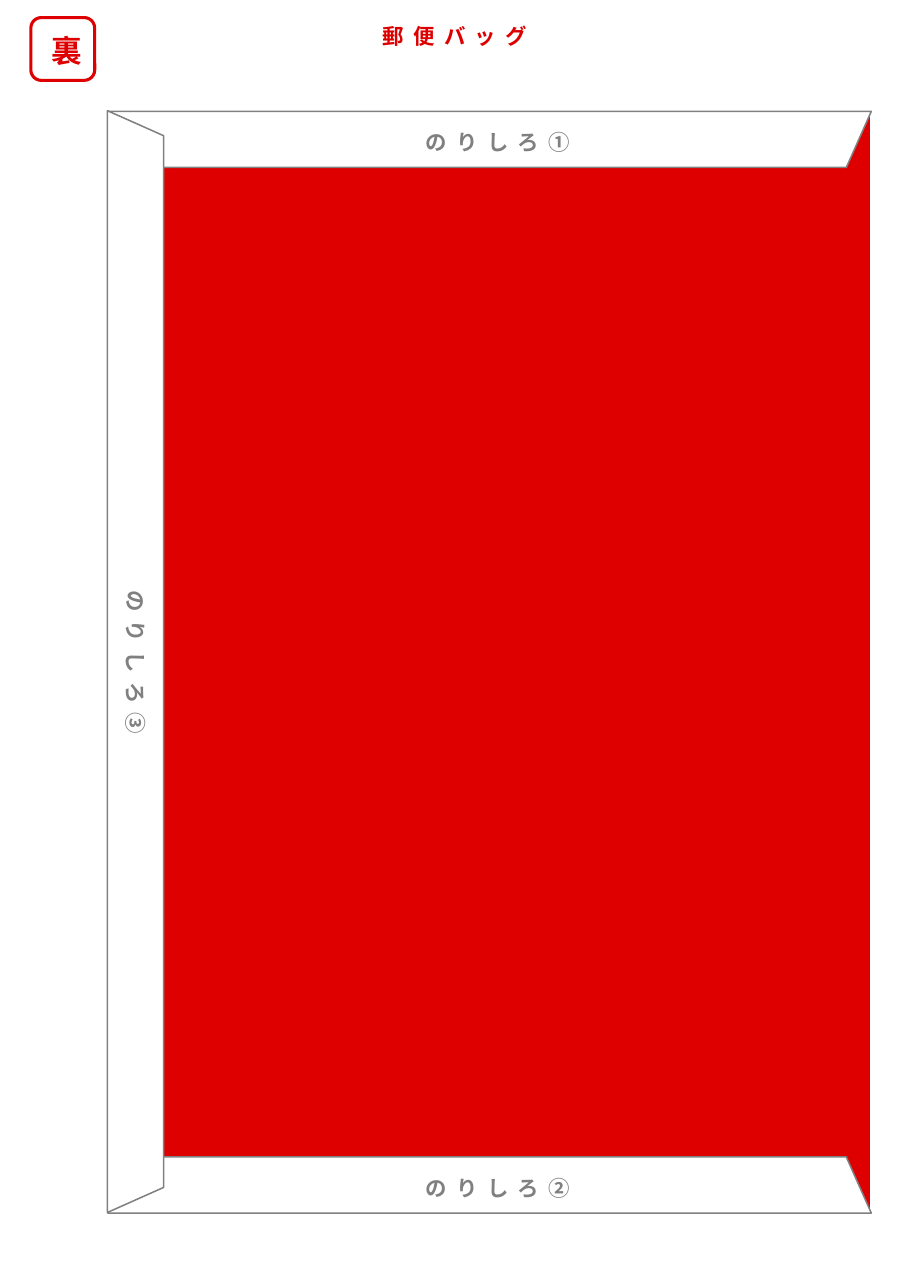
from typing import NamedTuple

from lxml.etree import SubElement
from pptx import Presentation
from pptx.dml.color import RGBColor
from pptx.enum.shapes import MSO_SHAPE
from pptx.enum.text import MSO_ANCHOR, MSO_AUTO_SIZE, PP_ALIGN
from pptx.oxml.ns import qn
from pptx.util import Emu, Pt

PX = 9144  # 100 px to the inch
FONT = "Noto Sans CJK JP"
COLORS = {"red": "DE0000", "gray": "808080", "white": "FFFFFF"}

# Bag body and the depth of its glue flaps
LEFT, TOP, WIDTH, HEIGHT = 98, 101, 693, 1000
FLAP = 51
FLAP_SLANT = 0.445
LABEL_W, LABEL_H = 160, 34


class Box(NamedTuple):
    x: int
    y: int
    w: int
    h: int


class Flap(NamedTuple):
    text: str
    box: Box
    rotation: int
    label: Box
    label_rotation: int


FLAPS = [
    Flap("のりしろ②", Box(LEFT, TOP + HEIGHT - FLAP, WIDTH, FLAP), 0,
         Box(372, 1062, LABEL_W, LABEL_H), 0),
    Flap("のりしろ①", Box(LEFT, TOP, WIDTH, FLAP), 180,
         Box(372, 112, LABEL_W, LABEL_H), 0),
    Flap("のりしろ③",
         Box(LEFT + (FLAP - HEIGHT) // 2, TOP + (HEIGHT - FLAP) // 2, HEIGHT, FLAP), 90,
         Box(43, 584, LABEL_W, LABEL_H), 90),
]


def px(n: int) -> Emu:
    return Emu(n * PX)


def rgb(name: str) -> RGBColor:
    return RGBColor.from_string(COLORS[name])


def place(sp, box: Box) -> None:
    sp.left, sp.top, sp.width, sp.height = map(px, box)


def add_shape(s, kind: MSO_SHAPE, box: Box, line: str, fill: str = "",
              weight: int = 1, rotation: int = 0):
    sp = s.shapes.add_shape(kind, *map(px, box))
    sp.shadow.inherit = False
    sp.rotation = rotation
    if fill:
        sp.fill.solid()
        sp.fill.fore_color.rgb = rgb(fill)
    else:
        sp.fill.background()
    sp.line.color.rgb = rgb(line)
    sp.line.width = Pt(weight)
    return sp


def write(sp, text: str, *, color: str, size: int = 14, spacing: int = 6) -> None:
    tf = sp.text_frame
    tf.word_wrap = False
    tf.auto_size = MSO_AUTO_SIZE.SHAPE_TO_FIT_TEXT
    tf.vertical_anchor = MSO_ANCHOR.TOP
    p = tf.paragraphs[0]
    p.alignment = PP_ALIGN.CENTER
    r = p.add_run()
    r.text = text
    r.font.size = Pt(size)
    r.font.bold = True
    r.font.color.rgb = rgb(color)
    r.font.name = FONT
    # East Asian font and letter spacing
    rpr = r._r.get_or_add_rPr()
    rpr.set("spc", str(spacing * 100))
    SubElement(rpr, qn("a:ea")).set("typeface", FONT)


def add_label(s, text: str, box: Box, *, color: str, size: int = 14,
              rotation: int = 0) -> None:
    sp = s.shapes.add_textbox(*map(px, box))
    sp.rotation = rotation
    write(sp, text, color=color, size=size)


def main() -> None:
    prs = Presentation()
    prs.slide_width, prs.slide_height = px(827), px(1169)
    s = prs.slides.add_slide(prs.slide_layouts[5])

    # Title
    place(s.shapes.title, Box(333, 16, LABEL_W, LABEL_H))
    write(s.shapes.title, "郵便バッグ", color="red")

    # Bag body
    add_shape(s, MSO_SHAPE.RECTANGLE, Box(LEFT, TOP, WIDTH, HEIGHT), "white", "red")

    # Glue flaps, then their labels on top
    for flap in FLAPS:
        sp = add_shape(s, MSO_SHAPE.TRAPEZOID, flap.box, "gray", "white",
                       rotation=flap.rotation)
        sp.adjustments[0] = FLAP_SLANT
    for flap in FLAPS:
        add_label(s, flap.text, flap.label, color="gray", rotation=flap.label_rotation)

    # Back-side badge
    add_shape(s, MSO_SHAPE.ROUNDED_RECTANGLE, Box(28, 16, 58, 57), "red", weight=2)
    add_label(s, "裏", Box(32, 24, 57, 44), color="red", size=20)

    prs.save("out.pptx")


if __name__ == "__main__":
    main()
